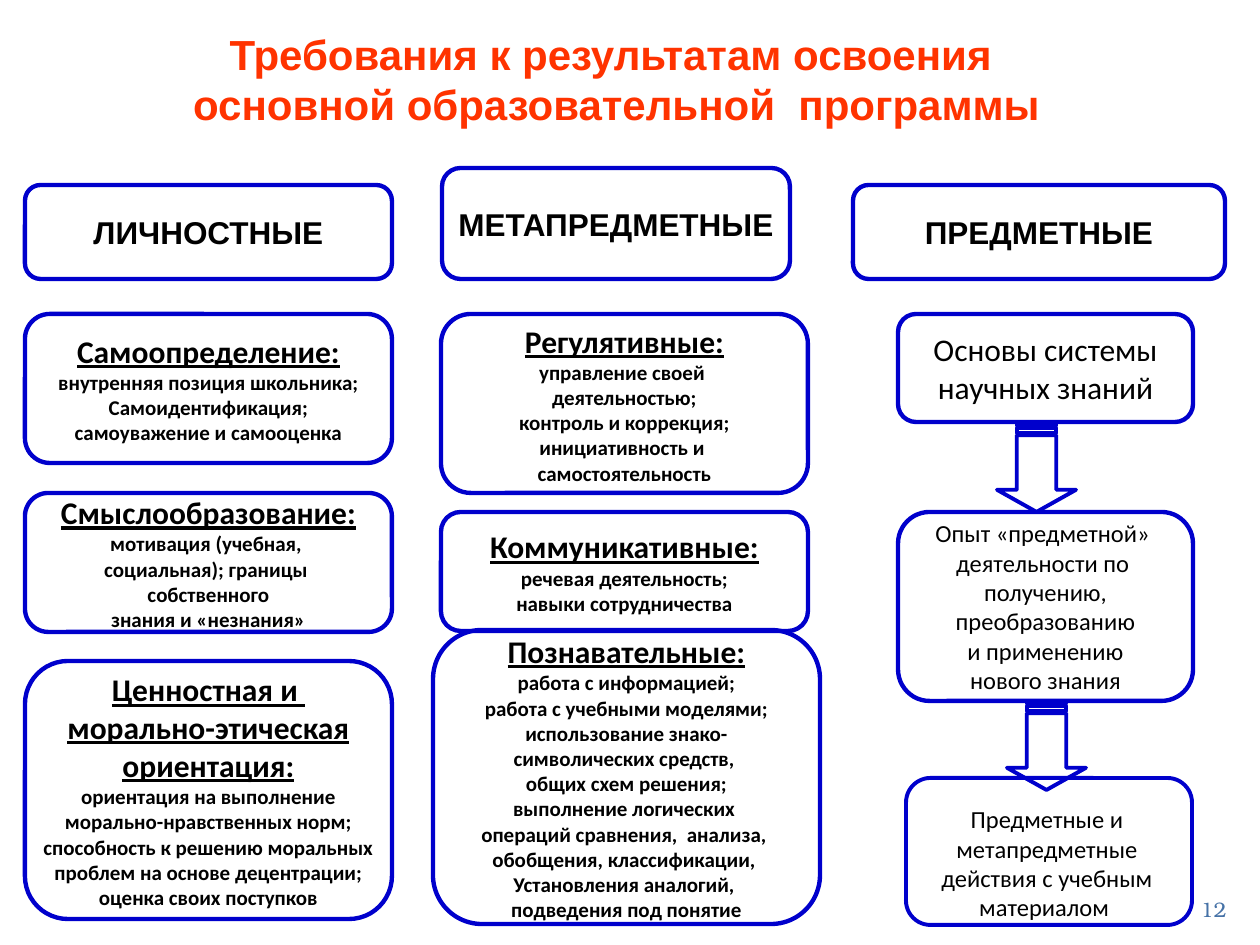
"""Builds the slide on requirements for the results of the basic educational programme."""
from pptx import Presentation
from pptx import util as u
from pptx.dml.color import RGBColor
from pptx.enum import shapes, text

PX = 914400 / 126
BLUE = RGBColor(0x00, 0x00, 0xCC)
BLACK = RGBColor(0x00, 0x00, 0x00)
ORANGE = RGBColor(0xFF, 0x33, 0x00)
STEEL = RGBColor(0x46, 0x72, 0xA7)


def px(*lengths):
    return [u.Emu(round(length * PX)) for length in lengths]


def write(frame, lines, size, font="Calibri", color=BLACK, bold=False,
          underline=False, align=text.PP_ALIGN.CENTER):
    for line in lines:
        paragraph = frame.paragraphs[0]
        if paragraph.runs:
            paragraph = frame.add_paragraph()
        paragraph.alignment = align
        run = paragraph.add_run()
        run.text = line
        run.font.size = u.Pt(size)
        run.font.name = font
        run.font.color.rgb = color
        run.font.bold = bold
        run.font.underline = underline


prs = Presentation()
prs.slide_width, prs.slide_height = px(1260, 945)
slide = prs.slides.add_slide(prs.slide_layouts[5])

title = slide.shapes.title
title.left, title.top, title.width, title.height = px(42, 21, 1149, 115)
title.text_frame.auto_size = text.MSO_AUTO_SIZE.NONE
title.text_frame.vertical_anchor = text.MSO_ANCHOR.MIDDLE
write(title.text_frame,
      ["Требования к результатам освоения ", "основной образовательной  программы"],
      24, "Arial", ORANGE, bold=True)

page_number = slide.shapes.add_textbox(*px(1134, 892, 105, 34))
page_number.text_frame.word_wrap = True
page_number.text_frame.vertical_anchor = text.MSO_ANCHOR.MIDDLE
write(page_number.text_frame, ["12"], 12, "TeX Gyre Bonum", STEEL,
      align=text.PP_ALIGN.RIGHT)

column_head = dict(size=18, font="Arial", bold=True)
group_head = dict(size=18, bold=True, underline=True)
group_item = dict(size=12, bold=True)
subject_base = dict(size=18)
subject_step = dict(size=14)

results = [
    ((25, 185, 367, 94), [(column_head, ["ЛИЧНОСТНЫЕ"])]),
    ((442, 168, 348, 111), [(column_head, ["МЕТАПРЕДМЕТНЫЕ"])]),
    ((853, 185, 372, 94), [(column_head, ["ПРЕДМЕТНЫЕ"])]),
    ((25, 314, 367, 149), [
        (group_head, ["Самоопределение:"]),
        (group_item, ["внутренняя позиция школьника;", "Самоидентификация;",
                      "самоуважение и самооценка"])]),
    ((25, 493, 367, 139), [
        (group_head, ["Смыслообразование:"]),
        (group_item, ["мотивация (учебная, ", "социальная); границы ",
                      "собственного", "знания и «незнания»"])]),
    ((25, 661, 367, 258), [
        (group_head, ["Ценностная и ", "морально-этическая", "ориентация:"]),
        (group_item, ["ориентация на выполнение", "морально-нравственных норм;",
                      "способность к решению моральных",
                      "проблем на основе децентрации;", "оценка своих поступков"])]),
    ((441, 314, 367, 179), [
        (group_head, ["Регулятивные:"]),
        (group_item, ["управление своей ", "деятельностью;", "контроль и коррекция;",
                      "инициативность и ", "самостоятельность"])]),
    ((441, 512, 367, 119), [
        (group_head, ["Коммуникативные:"]),
        (group_item, ["речевая деятельность;", "навыки сотрудничества"])]),
    ((433, 630, 387, 294), [
        (group_head, ["Познавательные:"]),
        (group_item, ["работа с информацией;", "работа с учебными моделями;",
                      "использование знако-", "символических средств, ",
                      "общих схем решения;", "выполнение логических ",
                      "операций сравнения,  анализа, ",
                      "обобщения, классификации, ", "Установления аналогий, ",
                      "подведения под понятие"])]),
    ((898, 314, 295, 108), [(subject_base, ["Основы системы", "научных знаний"])]),
    ((898, 512, 295, 189), [
        (subject_step, ["Опыт «предметной» ", "деятельности по ", "получению,",
                        "преобразованию", "и применению", "нового знания"])]),
    ((906, 778, 286, 147), []),
]
for place, parts in results:
    result = slide.shapes.add_shape(shapes.MSO_SHAPE.ROUNDED_RECTANGLE, *px(*place))
    result.shadow.inherit = False
    result.fill.background()
    result.line.color.rgb = BLUE
    result.line.width = u.Pt(2.5 if parts else 2.25)
    result.text_frame.word_wrap = False
    result.text_frame.vertical_anchor = text.MSO_ANCHOR.MIDDLE
    for style, lines in parts:
        write(result.text_frame, lines, **style)

actions = slide.shapes.add_textbox(*px(901, 798, 292, 130))
actions.text_frame.word_wrap = True
write(actions.text_frame,
      ["Предметные и метапредметные действия с учебным материалом "], **subject_step)

for left, top in [(992, 428), (1002, 706)]:
    step = slide.shapes.add_shape(shapes.MSO_SHAPE.STRIPED_RIGHT_ARROW,
                                  *px(left, top, 89, 79))
    step.rotation = 90
    step.adjustments[0] = 0.5
    step.adjustments[1] = 0.28
    step.shadow.inherit = False
    step.fill.background()
    step.line.color.rgb = BLUE
    step.line.width = u.Pt(2.25)

prs.save("out.pptx")
